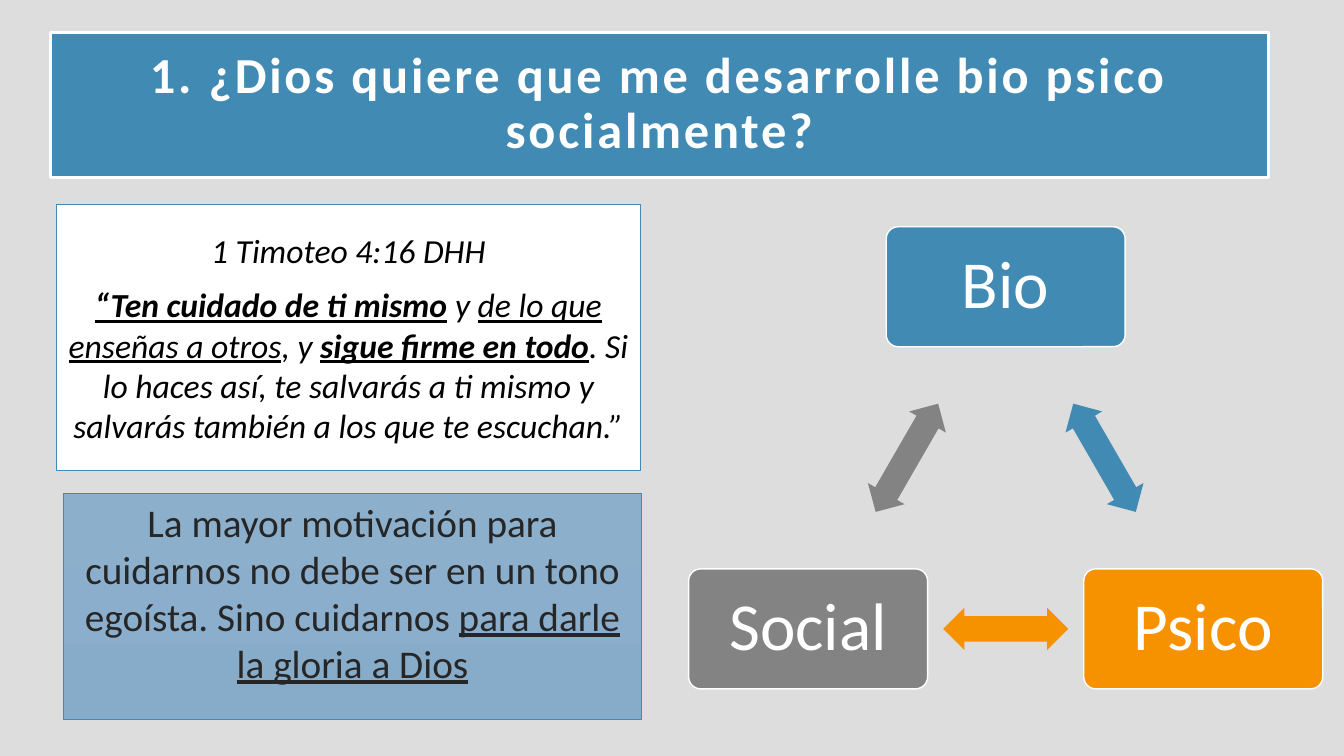
"""Build a slide on bio-psycho-social growth with a verse and a three-part cycle."""
import math
from dataclasses import dataclass

from lxml import etree
from pptx import Presentation, util as u
from pptx.dml.color import RGBColor
from pptx.enum import shapes, text
from pptx.oxml.ns import qn

TITLE = [[("1. ¿Dios quiere que me desarrolle bio psico socialmente?", "b")]]
VERSE = [
    [("1 Timoteo 4:16 DHH", "i")],
    [
        ("“Ten cuidado de ti mismo", "biu"),
        (" y ", "i"),
        ("de lo que enseñas a otros", "iu"),
        (", y ", "i"),
        ("sigue firme en todo", "biu"),
        (". Si lo haces así, te salvarás a ti mismo y salvarás también a los que te escuchan.”", "i"),
    ],
]
MOTIVE = [[
    ("La mayor motivación para cuidarnos no debe ser en un tono egoísta. Sino cuidarnos ", ""),
    ("para darle la gloria a Dios", "u"),
]]
CYCLE = [("Bio", "418AB3"), ("Psico", "F69200"), ("Social", "838383")]

TITLE_AREA = (3.75, 4.27, 90.62, 19.2)
VERSE_AREA = (4.2, 27.07, 43.44, 35.2)
MOTIVE_AREA = (4.73, 65.2, 42.99, 30)
CYCLE_CENTER = (74.83, 68.1)
CYCLE_RADIUS = 30.17
NODE_SIZE = (17.78, 15.87)
ARROW_SIZE = (9.3, 5.6)


@dataclass(frozen=True)
class Theme:
    font: str = "Calibri"
    back: str = "DDDDDD"
    blue: str = "418AB3"
    white: str = "FFFFFF"
    black: str = "000000"
    dark: str = "262626"
    wash: tuple = ("8CAFCB", "87ACCA")
    title: int = 36
    verse: int = 24
    motive: int = 28
    node: int = 48


T = Theme()
rgb = RGBColor.from_string
prs = Presentation()
prs.slide_width, prs.slide_height = u.Inches(13.33), u.Inches(7.5)
W, H = prs.slide_width, prs.slide_height


def place(sp, area):
    left, top, width, height = area
    sp.left, sp.width = int(W * left / 100), int(W * width / 100)
    sp.top, sp.height = int(H * top / 100), int(H * height / 100)


def paint(sp, fill=None, line=None, weight=1):
    if fill:
        sp.fill.solid()
        sp.fill.fore_color.rgb = rgb(fill)
    if line:
        sp.line.color.rgb = rgb(line)
        sp.line.width = u.Pt(weight)
    else:
        sp.line.fill.background()


def write(sp, paragraphs, *, size, color, before=0, leading=1.0, inset=None,
          anchor=text.MSO_ANCHOR.MIDDLE, tracking=0):
    tf = sp.text_frame
    tf.word_wrap = True
    tf.auto_size = text.MSO_AUTO_SIZE.NONE
    tf.vertical_anchor = anchor
    if inset is not None:
        tf.margin_left = tf.margin_right = u.Inches(inset)
        tf.margin_top = tf.margin_bottom = u.Inches(inset)
    for i, runs in enumerate(paragraphs):
        p = tf.add_paragraph() if i else tf.paragraphs[0]
        p.alignment = text.PP_ALIGN.CENTER
        p.space_before, p.line_spacing = u.Pt(before), leading
        props = p._p.get_or_add_pPr()
        props.set("marL", "0")
        props.set("indent", "0")
        etree.SubElement(props, qn("a:buNone"))
        for words, style in runs:
            r = p.add_run()
            r.text = words
            f = r.font
            f.name, f.size, f.color.rgb = T.font, u.Pt(size), rgb(color)
            f.bold, f.italic, f.underline = ("b" in style, "i" in style, "u" in style)
            if tracking:
                r._r.get_or_add_rPr().set("spc", str(tracking * 100))


def add(s, kind, area):
    sp = s.shapes.add_shape(kind, 0, 0, 0, 0)
    sp.shadow.inherit = False
    place(sp, area)
    return sp


def around(center, size):
    return (center[0] - size[0] / 2, center[1] - size[1] / 2, *size)


def add_cycle(s):
    centers = []
    for i in range(len(CYCLE)):
        angle = math.radians(360 / len(CYCLE) * i - 90)
        centers.append((CYCLE_CENTER[0] + CYCLE_RADIUS * H / W * math.cos(angle),
                        CYCLE_CENTER[1] + CYCLE_RADIUS * math.sin(angle)))
    for i, (name, color) in enumerate(CYCLE):
        node = add(s, shapes.MSO_SHAPE.ROUNDED_RECTANGLE, around(centers[i], NODE_SIZE))
        node.adjustments[0] = 0.1
        paint(node, color, T.white)
        write(node, [[(name, "")]], size=T.node, color=T.white, leading=0.9, inset=0.2)

        following = centers[(i + 1) % len(centers)]
        middle = [(a + b) / 2 for a, b in zip(centers[i], following)]
        arrow = add(s, shapes.MSO_SHAPE.LEFT_RIGHT_ARROW, around(middle, ARROW_SIZE))
        arrow.adjustments[0], arrow.adjustments[1] = 0.6, 0.5
        arrow.rotation = 60 + 360 / len(CYCLE) * i
        paint(arrow, color)


def main():
    s = prs.slides.add_slide(prs.slide_layouts[1])
    s.background.fill.solid()
    s.background.fill.fore_color.rgb = rgb(T.back)

    title, verse = s.shapes.title, s.placeholders[1]
    place(title, TITLE_AREA)
    paint(title, T.blue, T.white, 2.5)
    write(title, TITLE, size=T.title, color=T.white, leading=0.9, inset=0.2, tracking=2)

    place(verse, VERSE_AREA)
    paint(verse, T.white, T.blue)
    write(verse, VERSE, size=T.verse, color=T.black, before=10)

    add_cycle(s)

    motive = add(s, shapes.MSO_SHAPE.RECTANGLE, MOTIVE_AREA)
    motive.fill.gradient()
    motive.fill.gradient_angle = 270
    for stop, color in zip(motive.fill.gradient_stops, T.wash):
        stop.color.rgb = rgb(color)
    paint(motive, line=T.blue, weight=0.5)
    write(motive, MOTIVE, size=T.motive, color=T.dark, before=10,
          anchor=text.MSO_ANCHOR.TOP)

    prs.save("out.pptx")


if __name__ == "__main__":
    main()
